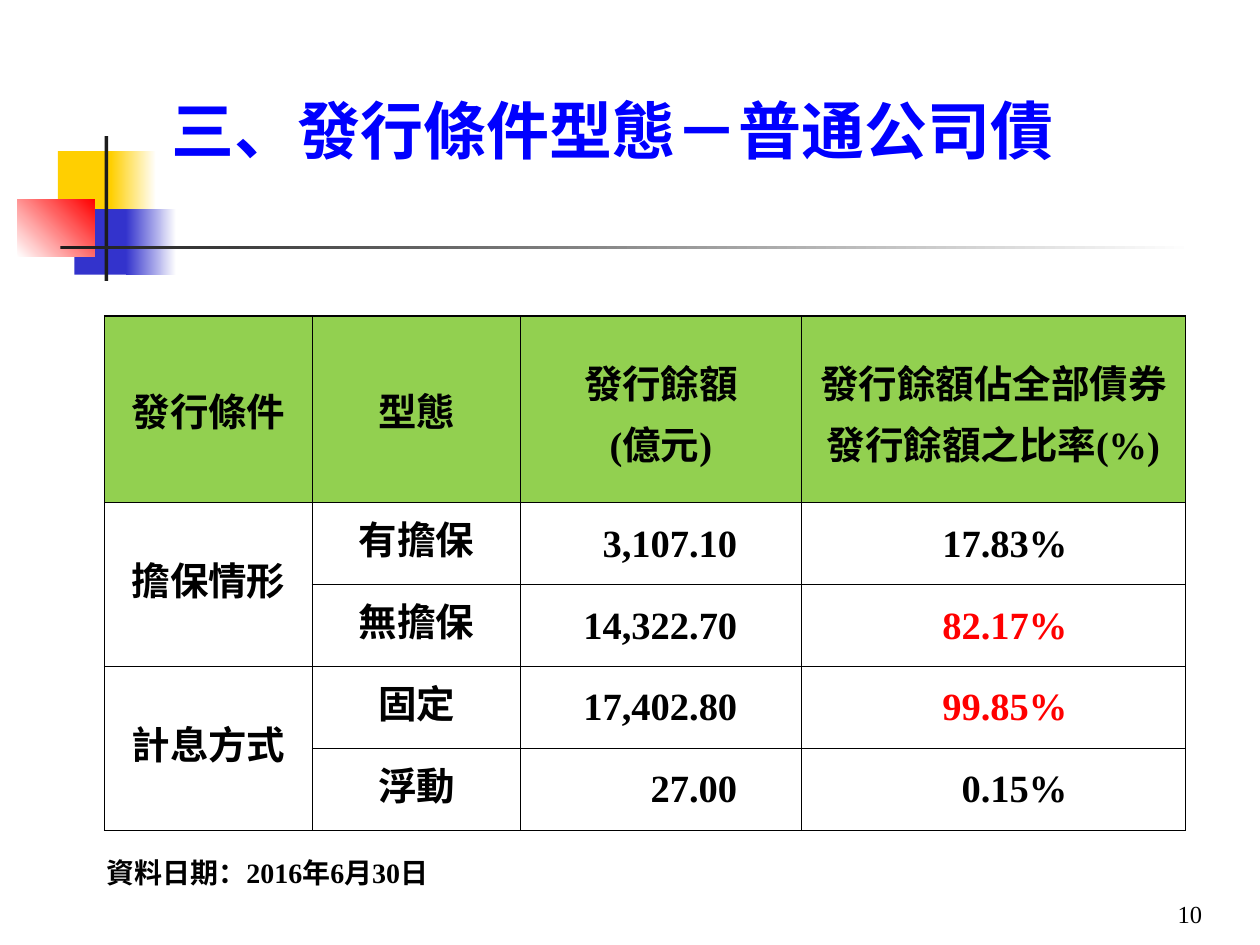
"""Build the slide on issue terms of ordinary corporate bonds."""
import pptx
import pptx.util
import pptx.dml.color
import pptx.enum.shapes
import pptx.enum.text
import pptx.oxml
import pptx.oxml.ns

Inches = pptx.util.Inches
Pt = pptx.util.Pt
ALIGN = pptx.enum.text.PP_ALIGN
ANCHOR = pptx.enum.text.MSO_ANCHOR

TITLE = "三、發行條件型態－普通公司債"
DATE = "資料日期：2016年6月30日"
PAGE = "10"
HEAD = ["發行條件", "型態", "發行餘額\n(億元)", "發行餘額佔全部債券發行餘額之比率(%)"]
ROWS = [
    ["擔保情形", "有擔保", "3,107.10", "17.83%"],
    [None, "無擔保", "14,322.70", "82.17%"],
    ["計息方式", "固定", "17,402.80", "99.85%"],
    [None, "浮動", "27.00", "0.15%"],
]
HOT = {"82.17%", "99.85%"}
COLS = [1.65, 1.65, 2.23, 3.05]
TALL = [1.48] + [0.65] * len(ROWS)
PADS = [0.02, 0.02, 0.51, 0.94]
SERIF, SANS = "Times New Roman", "Noto Sans CJK SC"
BLACK, WHITE, RED, INK = "000000", "FFFFFF", "FF0000", "1C1C1C"
GOLD, BLUE, GREEN = "FFCF01", "3333CC", "92D050"
DECOR = [
    ((0.46, 1.2, 0.48, 0.52), [GOLD], 0),
    ((0.88, 1.2, 0.36, 0.52), [GOLD, WHITE], 0),
    ((0.59, 1.66, 0.46, 0.52), [BLUE], 0),
    ((1, 1.66, 0.4, 0.52), [BLUE, WHITE], 0),
    ((0.14, 1.58, 0.61, 0.46), [WHITE, RED], 45),
    ((0.83, 1.08, 0.03, 1.15), [INK], 0),
    ((0.48, 1.95, 9, 0.03), [INK, WHITE], 0),
]


def color(code):
    """Turn a hex string into a colour."""
    return pptx.dml.color.RGBColor.from_string(code)


def write(frame, text, size=22, font=SERIF, ink=BLACK, bold=True,
          align=ALIGN.LEFT, gap=None):
    """Fill a text frame with formatted paragraphs."""
    frame.word_wrap = True
    for i, line in enumerate(text.split("\n")):
        para = frame.paragraphs[0] if i == 0 else frame.add_paragraph()
        para.alignment = align
        if gap:
            para.line_spacing = gap
        run = para.add_run()
        run.text = line
        run.font.size = Pt(size)
        run.font.name = font
        run.font.bold = bold
        run.font.color.rgb = color(ink)
        east = pptx.oxml.parse_xml(
            f'<a:ea {pptx.oxml.ns.nsdecls("a")} typeface="{SANS}"/>')
        run.font._element.find(pptx.oxml.ns.qn("a:latin")).addnext(east)


def block(slide, box, tones, angle):
    """Draw a plain or graded rectangle."""
    kind = pptx.enum.shapes.MSO_SHAPE.RECTANGLE
    shape = slide.shapes.add_shape(kind, *map(Inches, box))
    shape.shadow.inherit = False
    shape.line.fill.background()
    if len(tones) == 1:
        shape.fill.solid()
        shape.fill.fore_color.rgb = color(tones[0])
        return
    shape.fill.gradient()
    shape.fill.gradient_angle = angle
    for stop, tone, place in zip(shape.fill.gradient_stops, tones, (0, 1)):
        stop.color.rgb = color(tone)
        stop.position = place


def edge(cell):
    """Give a cell thin black borders."""
    props = cell._tc.get_or_add_tcPr()
    for i, side in enumerate(("lnL", "lnR", "lnT", "lnB")):
        props.insert(i, pptx.oxml.parse_xml(
            f'<a:{side} {pptx.oxml.ns.nsdecls("a")} w="{Pt(1)}"><a:solidFill>'
            f'<a:srgbClr val="{BLACK}"/></a:solidFill></a:{side}>'))


def grid(slide):
    """Build the table of issue terms."""
    data = [HEAD] + ROWS
    area = map(Inches, (0.83, 2.51, sum(COLS), sum(TALL)))
    table = slide.shapes.add_table(len(data), len(COLS), *area).table
    for col, width in zip(table.columns, COLS):
        col.width = Inches(width)
    for r, row in enumerate(data):
        table.rows[r].height = Inches(TALL[r])
        for c, text in enumerate(row):
            cell = table.cell(r, c)
            head = r == 0
            cell.vertical_anchor = ANCHOR.MIDDLE
            cell.margin_top = cell.margin_bottom = 0
            cell.margin_left = Inches(0.02)
            cell.margin_right = Inches(0.02 if head else PADS[c])
            cell.fill.solid()
            cell.fill.fore_color.rgb = color(GREEN if head else WHITE)
            edge(cell)
            if text is None:
                table.cell(r - 1, c).merge(cell)
                continue
            gap = (1.1 if c > 1 else None) if head else Pt(25)
            write(cell.text_frame, text, gap=gap,
                  ink=RED if text in HOT else BLACK,
                  align=ALIGN.CENTER if head or c < 2 else ALIGN.RIGHT)


def label(slide, box, text, anchor=ANCHOR.TOP, **style):
    """Add a text box."""
    frame = slide.shapes.add_textbox(*map(Inches, box)).text_frame
    frame.vertical_anchor = anchor
    write(frame, text, **style)


def main():
    """Make and save the slide."""
    deck = pptx.Presentation()
    deck.slide_width, deck.slide_height = Inches(10), Inches(7.5)
    slide = deck.slides.add_slide(deck.slide_layouts[5])
    for box, tones, angle in DECOR:
        block(slide, box, tones, angle)
    title = slide.shapes.title
    title.left, title.top, title.width, title.height = map(
        Inches, (1.26, 0.59, 8.66, 0.79))
    title.text_frame.auto_size = pptx.enum.text.MSO_AUTO_SIZE.NONE
    title.text_frame.vertical_anchor = ANCHOR.BOTTOM
    write(title.text_frame, TITLE, size=36, font=SANS, ink="0000FF")
    grid(slide)
    label(slide, (0.75, 6.74, 3.07, 0.37), DATE, size=16)
    label(slide, (7.56, 6.92, 2.08, 0.5), PAGE, anchor=ANCHOR.BOTTOM,
          size=14, bold=False, align=ALIGN.RIGHT)
    deck.save("out.pptx")


if __name__ == "__main__":
    main()
